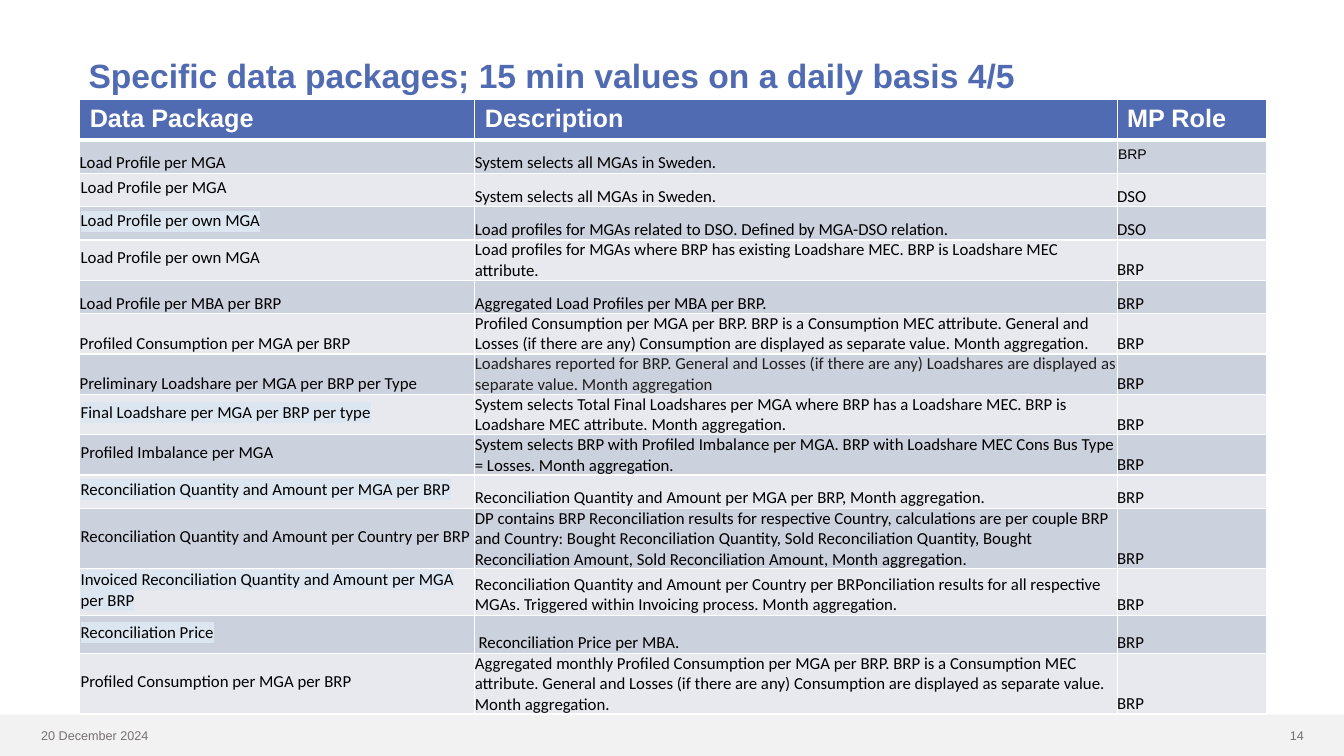
from lxml import etree
from pptx import Presentation
from pptx.dml.color import RGBColor
from pptx.enum import shapes, text
from pptx.oxml import ns
from pptx.util import Pt

PX = 9144
HUES = {
    "blue": "516BB3", "white": "FFFFFF", "black": "000000", "ink": "201F1F",
    "band": "CCD1DE", "pale": "E7E9EF", "mark": "DCE6F1",
    "bar": "F2F2F2", "gray": "767171",
}
HEADS = ["Data Package", "Description", "MP Role"]
COLS = [392, 637, 148]
ROWS = [38] + [33] * 12 + [38, 33]
PACKS = [
    ("Load Profile per MGA", "low", "System selects all MGAs in Sweden.", "BRP"),
    ("Load Profile per MGA", "mid", "System selects all MGAs in Sweden.", "DSO"),
    ("Load Profile per own MGA", "mark",
     "Load profiles for MGAs related to DSO. Defined by MGA-DSO relation.", "DSO"),
    ("Load Profile per own MGA", "mid",
     "Load profiles for MGAs where BRP has existing Loadshare MEC. "
     "BRP is Loadshare MEC attribute.", "BRP"),
    ("Load Profile per MBA per BRP", "low",
     "Aggregated Load Profiles per MBA per BRP.", "BRP"),
    ("Profiled Consumption per MGA per BRP", "low",
     "Profiled Consumption per MGA per BRP. BRP is a Consumption MEC attribute. "
     "General and Losses (if there are any) Consumption are displayed as separate "
     "value. Month aggregation.", "BRP"),
    ("Preliminary Loadshare per MGA per BRP per Type", "low",
     "Loadshares reported for BRP. General and Losses (if there are any) "
     "Loadshares are displayed as separate value. Month aggregation", "BRP"),
    ("Final Loadshare per MGA per BRP per type", "mark",
     "System selects Total Final Loadshares per MGA where BRP has a Loadshare MEC. "
     "BRP is Loadshare MEC attribute. Month aggregation.", "BRP"),
    ("Profiled Imbalance per MGA", "mid",
     "System selects BRP with Profiled Imbalance per MGA. BRP with Loadshare MEC "
     "Cons Bus Type = Losses. Month aggregation.", "BRP"),
    ("Reconciliation Quantity and Amount per MGA per BRP", "mark",
     "Reconciliation Quantity and Amount per MGA per BRP, Month aggregation.", "BRP"),
    ("Reconciliation Quantity and Amount per Country per BRP", "mid",
     "DP contains BRP Reconciliation results for respective Country, calculations "
     "are per couple BRP and Country: Bought Reconciliation Quantity, Sold "
     "Reconciliation Quantity, Bought Reconciliation Amount, Sold Reconciliation "
     "Amount, Month aggregation.", "BRP"),
    ("Invoiced Reconciliation Quantity and Amount per MGA per BRP", "mark",
     "Reconciliation Quantity and Amount per Country per BRPonciliation results for "
     "all respective MGAs. Triggered within Invoicing process. Month aggregation.",
     "BRP"),
    ("Reconciliation Price", "mark", " Reconciliation Price per MBA.", "BRP"),
    ("Profiled Consumption per MGA per BRP", "mid",
     "Aggregated monthly Profiled Consumption per MGA per BRP. BRP is a Consumption "
     "MEC attribute. General and Losses (if there are any) Consumption are displayed "
     "as separate value. Month aggregation.", "BRP"),
]


def tint(name):
    return RGBColor.from_string(HUES[name])


def scale(*sizes):
    return [size * PX for size in sizes]


def style(frame, size, hue, face="Arial", bold=False):
    for run in frame.paragraphs[0].runs:
        run.font.size = Pt(size)
        run.font.name = face
        run.font.bold = bold
        run.font.color.rgb = tint(hue)


def label(slide, words, area, size, hue, bold=False, align=text.PP_ALIGN.LEFT):
    frame = slide.shapes.add_textbox(*scale(*area)).text_frame
    frame.word_wrap = True
    frame.text = words
    frame.paragraphs[0].alignment = align
    style(frame, size, hue, bold=bold)
    return frame


def footer(slide):
    bar = slide.shapes.add_shape(
        shapes.MSO_SHAPE.RECTANGLE, *scale(0, 709, 1333, 41))
    bar.shadow.inherit = False
    bar.fill.solid()
    bar.fill.fore_color.rgb = tint("bar")
    bar.line.fill.background()
    label(slide, "14", (1221, 717, 82, 25), 9, "gray", align=text.PP_ALIGN.RIGHT)
    label(slide, "20 December 2024", (31, 717, 212, 25), 9, "gray")


def border(cell, top, base):
    props = cell._tc.get_or_add_tcPr()
    for side, width in zip("LRTB", (1, 1, top, base)):
        line = etree.SubElement(props, ns.qn("a:ln" + side), w=str(Pt(width)))
        fill = etree.SubElement(line, ns.qn("a:solidFill"))
        etree.SubElement(fill, ns.qn("a:srgbClr"), val=HUES["white"])


def paint(cell, hue):
    cell.fill.solid()
    cell.fill.fore_color.rgb = tint(hue)


def inset(cell, sizes, anchor):
    (cell.margin_left, cell.margin_top,
     cell.margin_right, cell.margin_bottom) = scale(*sizes)
    cell.vertical_anchor = anchor


def mark(cell):
    props = cell.text_frame.paragraphs[0].runs[0].font._element
    glow = etree.Element(ns.qn("a:highlight"))
    etree.SubElement(glow, ns.qn("a:srgbClr"), val=HUES["mark"])
    props.find(ns.qn("a:solidFill")).addnext(glow)


def entry(cell, words, mode, hue="black", size=12, face="Calibri"):
    cell.text = words
    style(cell.text_frame, size, hue, face)
    if mode == "low":
        inset(cell, (0, 0, 0, 0), text.MSO_ANCHOR.BOTTOM)
    else:
        inset(cell, (1, 1, 1, 5), text.MSO_ANCHOR.MIDDLE)
    if mode == "mark":
        mark(cell)


def grid(slide):
    table = slide.shapes.add_table(
        len(ROWS), len(COLS), *scale(79, 99, sum(COLS), sum(ROWS))).table
    for col, width in zip(table.columns, scale(*COLS)):
        col.width = width
    for row, height in zip(table.rows, scale(*ROWS)):
        row.height = height
    for cell, words in zip(table.rows[0].cells, HEADS):
        border(cell, 1, 3)
        paint(cell, "blue")
        cell.text = words
        style(cell.text_frame, 18, "white", bold=True)
    for num, (name, mode, about, role) in enumerate(PACKS, 1):
        cells = list(table.rows[num].cells)
        for cell in cells:
            border(cell, 3 if num == 1 else 1, 1)
            paint(cell, "band" if num % 2 else "pale")
        entry(cells[0], name, mode)
        entry(cells[1], about, "low", "ink" if num == 7 else "black")
        if num == 1:
            entry(cells[2], role, "mid", size=10, face="Arial")
        else:
            entry(cells[2], role, "low")


def main():
    deck = Presentation()
    deck.slide_width, deck.slide_height = scale(1333, 750)
    slide = deck.slides.add_slide(deck.slide_layouts[6])
    footer(slide)
    title = label(slide, "Specific data packages; 15 min values on a daily basis 4/5",
                  (78, 4, 1173, 145), 24, "blue", bold=True)
    title.vertical_anchor = text.MSO_ANCHOR.MIDDLE
    title.paragraphs[0].line_spacing = 0.9
    grid(slide)
    deck.save("out.pptx")


if __name__ == "__main__":
    main()
